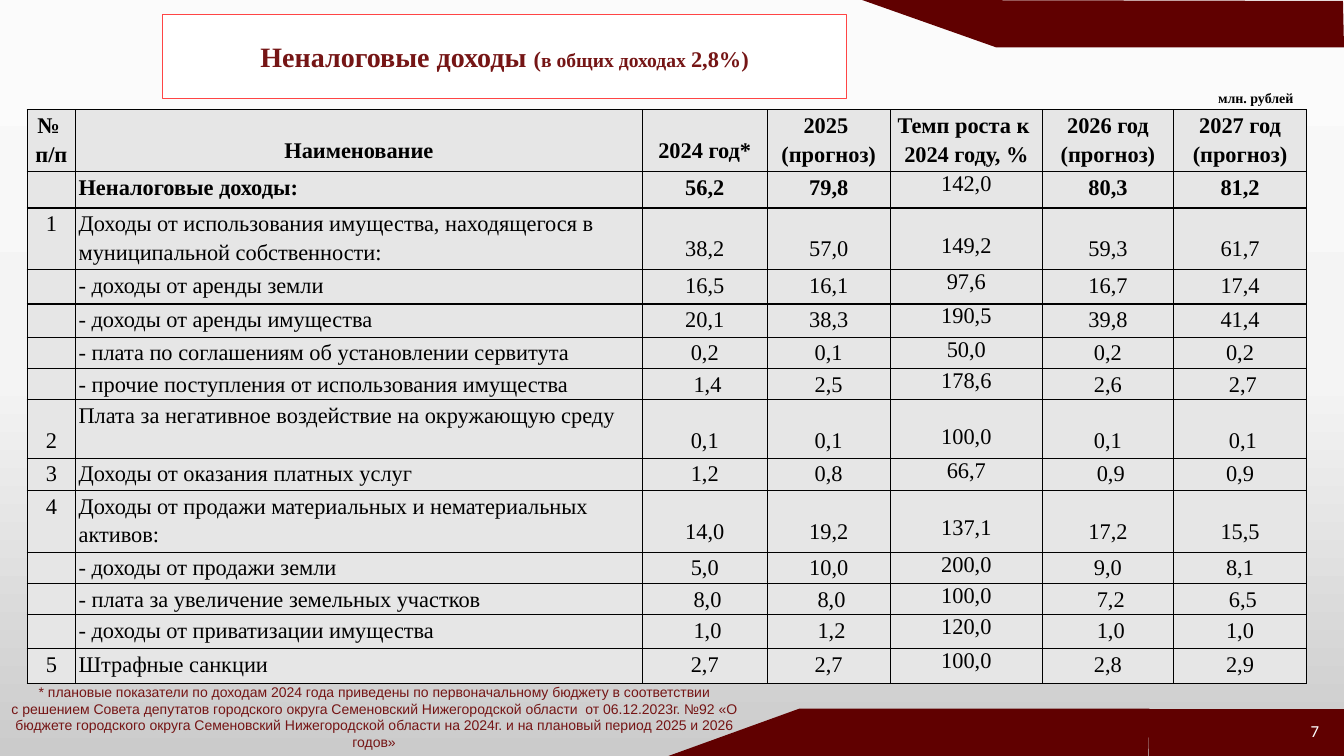
from copy import deepcopy
from lxml import etree
from pptx import Presentation
from pptx.dml.color import RGBColor
from pptx.enum.text import MSO_ANCHOR, MSO_AUTO_SIZE, PP_ALIGN
from pptx.oxml.ns import qn
from pptx.util import Inches, Pt

CENTER, LEFT = PP_ALIGN.CENTER, PP_ALIGN.LEFT
TOP, MIDDLE = MSO_ANCHOR.TOP, MSO_ANCHOR.MIDDLE
GROW, FIXED = MSO_AUTO_SIZE.SHAPE_TO_FIT_TEXT, MSO_AUTO_SIZE.NONE

COLORS = {
    "band": "600000", "cell": "E6E6E6", "black": "000000", "white": "FFFFFF",
    "wine": "751515", "frame": "FF4545",
    "sky": "FBFBFB", "haze": "F4F4F4", "ground": "CBCBCB",
}
SERIF, SANS, NUMERAL = "Times New Roman", "Arial", "Calibri"

COLUMN_WIDTHS = [0.48, 5.62, 1.24, 1.22, 1.51, 1.3, 1.32]
ROW_HEIGHTS = [0.61, 0.36, 0.61, 0.34, 0.33, 0.31, 0.31,
               0.58, 0.32, 0.61, 0.31, 0.31, 0.34, 0.34]
NAME_COLUMN, GROWTH_COLUMN = 1, 4
TOTAL_ROW = 1
TALL_ROWS = (2, 7, 9)   # rows whose figures stand on the second line
LOWERED_CELLS = {(0, 1), (0, 2), (7, 0)}
SECOND_LINE = 0.25

INCOME = [
    ["№ \nп/п", "Наименование", "2024 год*", "2025 \n(прогноз)",
     "Темп роста к \n2024 году, %", "2026 год\n(прогноз)", "2027 год\n(прогноз)"],
    ["", "Неналоговые доходы:", "56,2", "79,8", "142,0", "80,3", "81,2"],
    ["1", "Доходы от использования имущества, находящегося в муниципальной собственности:",
     "38,2", "57,0", "149,2", "59,3", "61,7"],
    ["", "- доходы от аренды земли", "16,5", "16,1", "97,6", "16,7", "17,4"],
    ["", "- доходы от аренды имущества", "20,1", "38,3", "190,5", "39,8", "41,4"],
    ["", "- плата по соглашениям об установлении сервитута",
     "0,2", "0,1", "50,0", "0,2", "0,2"],
    ["", "- прочие поступления от использования имущества",
     " 1,4", "2,5", "178,6", "2,6", " 2,7"],
    ["2", "Плата за негативное воздействие на окружающую среду",
     "0,1", "0,1", "100,0", "0,1", " 0,1"],
    ["3", "Доходы от оказания платных услуг", "1,2", "0,8", "66,7", " 0,9", "0,9"],
    ["4", "Доходы от продажи материальных и нематериальных активов:",
     "14,0", "19,2", "137,1", "17,2", "15,5"],
    ["", "- доходы от продажи земли", "5,0", "10,0", "200,0", "9,0", "8,1"],
    ["", "- плата за увеличение земельных участков",
     " 8,0", " 8,0", "100,0", " 7,2", " 6,5"],
    ["", "- доходы от приватизации имущества", " 1,0", " 1,2", "120,0", " 1,0", "1,0"],
    ["5", "Штрафные санкции", "2,7", "2,7", "100,0", "2,8", "2,9"],
]


def rgb(name):
    return RGBColor.from_string(COLORS[name])


def add_span(para, text, size=16, font=SERIF, color="black", bold=False):
    span = para.add_run()
    span.text = text
    span.font.size = Pt(size)
    span.font.name = font
    span.font.bold = bold
    span.font.color.rgb = rgb(color)


def write(frame, text, align=CENTER, spacing=None, **look):
    """Fill a text frame, one paragraph for each line of text."""
    for number, line in enumerate(text.split("\n")):
        para = frame.paragraphs[0] if number == 0 else frame.add_paragraph()
        para.alignment = align
        if spacing:
            para.line_spacing = spacing
        if line:
            add_span(para, line, **look)
        else:
            para._p.get_or_add_endParaRPr().set("sz", "1600")


def add_label(page, box, text, margin=None, auto_size=GROW, **look):
    shape = page.shapes.add_textbox(*map(Inches, box))
    frame = shape.text_frame
    frame.word_wrap = True
    frame.auto_size = auto_size
    if margin is not None:
        frame.margin_top = frame.margin_bottom = Inches(margin)
    write(frame, text, **look)
    return frame


def paint_background(page):
    fill = page.background.fill
    fill.gradient()
    fill.gradient_angle = 270
    stops = next(page._element.iter(qn("a:gsLst")))
    stops.insert(1, deepcopy(stops[0]))
    for stop, position, name in zip(fill.gradient_stops, (0, 0.5, 1),
                                    ("sky", "haze", "ground")):
        stop.position = position
        stop.color.rgb = rgb(name)


def add_band(page, box, points):
    """Draw a dark band; points are offsets from the box corner."""
    left, top = box
    corners = [(Inches(left + x), Inches(top + y)) for x, y in points]
    builder = page.shapes.build_freeform(*corners[0], scale=1.0)
    builder.add_line_segments(corners[1:], close=True)
    band = builder.convert_to_shape()
    band.shadow.inherit = False
    band.fill.solid()
    band.fill.fore_color.rgb = rgb("band")
    band.line.fill.background()


def add_title(page, box):
    title = page.shapes.title
    title.left, title.top, title.width, title.height = map(Inches, box)
    title.fill.solid()
    title.fill.fore_color.rgb = rgb("white")
    title.line.color.rgb = rgb("frame")
    title.line.width = Pt(0.75)
    frame = title.text_frame
    frame.word_wrap = True
    frame.auto_size = GROW
    frame.vertical_anchor = MIDDLE
    para = frame.paragraphs[0]
    para.alignment = CENTER
    for text, size in (("Неналоговые доходы ", 20), ("(", 16),
                       ("в общих доходах ", 14), ("2,8%)", 16)):
        add_span(para, text, size=size, color="wine", bold=True)


def add_borders(cell):
    properties = cell._tc.get_or_add_tcPr()
    for side in ("a:lnL", "a:lnR", "a:lnT", "a:lnB"):
        line = etree.SubElement(properties, qn(side), w=str(Pt(1)))
        paint = etree.SubElement(line, qn("a:solidFill"))
        etree.SubElement(paint, qn("a:srgbClr"), val=COLORS["black"])


def format_cell(cell, text, row, column):
    growth = column == GROWTH_COLUMN and row > 0
    lowered = (row, column) in LOWERED_CELLS or (
        row in TALL_ROWS and column > NAME_COLUMN)
    add_borders(cell)
    cell.fill.solid()
    cell.fill.fore_color.rgb = rgb("cell")
    cell.vertical_anchor = TOP
    cell.margin_left = cell.margin_right = Inches(0.03)
    cell.margin_top = Inches(SECOND_LINE if lowered else 0)
    cell.margin_bottom = 0
    write(cell.text_frame, text,
          align=LEFT if column == NAME_COLUMN and row > 0 else CENTER,
          spacing=None if growth else 1.15,
          bold=row <= TOTAL_ROW and not growth)


def add_income_table(page, box):
    shape = page.shapes.add_table(len(INCOME), len(COLUMN_WIDTHS), *map(Inches, box))
    table = shape.table
    table.first_row = table.horz_banding = False
    for column, width in zip(table.columns, COLUMN_WIDTHS):
        column.width = Inches(width)
    for row, height in zip(table.rows, ROW_HEIGHTS):
        row.height = Inches(height)
    for row, texts in enumerate(INCOME):
        for column, text in enumerate(texts):
            format_cell(table.cell(row, column), text, row, column)


def build_slide(deck):
    page = deck.slides.add_slide(deck.slide_layouts[5])
    paint_background(page)
    # Dark bands in the corners
    add_band(page, (8.55, 0), [(4.77, 0.01), (0, 0), (1.33, 0.47), (4.78, 0.47)])
    add_band(page, (6.63, 7.03), [(4.77, 0), (1.3, 0), (0, 0.47), (4.76, 0.47)])
    add_band(page, (11.4, 7.03), [(0, 0), (1.93, 0), (1.93, 0.47), (0, 0.47)])
    # Table with its heading and unit
    add_income_table(page, (0.27, 1.09, sum(COLUMN_WIDTHS), sum(ROW_HEIGHTS)))
    add_title(page, (1.61, 0.34, 6.79, 0.44))
    add_label(page, (11.67, 0.8, 1.57, 0.37), "млн. рублей",
              margin=0.1, size=10, bold=True)
    # Footnote and page number
    add_label(page, (-0.08, 6.73, 7.58, 0.77),
              "* плановые показатели по доходам 2024 года приведены по первоначальному "
              "бюджету в соответствии\nс решением Совета депутатов городского округа "
              "Семеновский Нижегородской области  от 06.12.2023г. №92 «О бюджете "
              "городского округа Семеновский Нижегородской области на 2024г. и на "
              "плановый период 2025 и 2026 годов»",
              size=10, font=SANS, color="wine")
    add_label(page, (12.9, 7.12, 0.39, 0.4), "7", auto_size=FIXED, align=LEFT,
              spacing=0.9, size=12, font=NUMERAL, color="white")


def main():
    deck = Presentation()
    deck.slide_width, deck.slide_height = Inches(13.33), Inches(7.5)
    build_slide(deck)
    deck.save("out.pptx")


if __name__ == "__main__":
    main()
